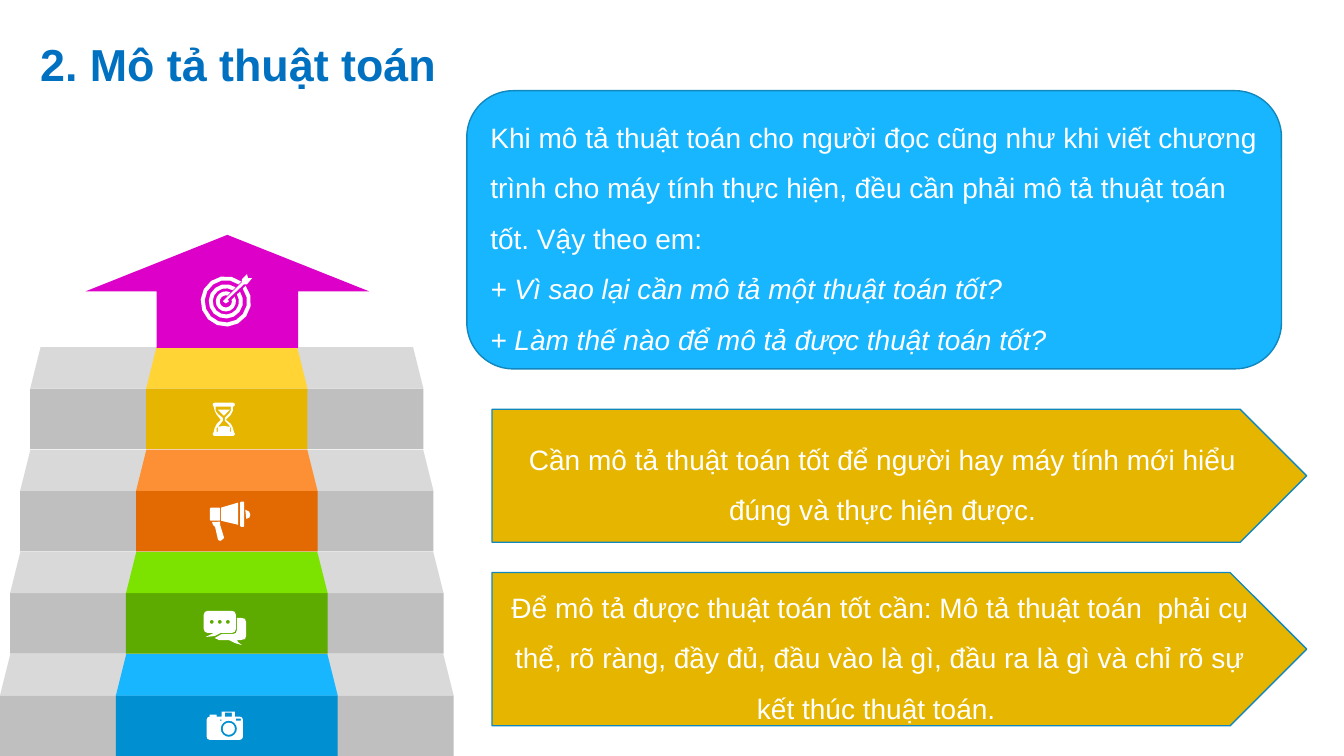
"""Build the slide on describing algorithms, with a staircase and three text panels."""
import math

import pptx
import pptx.dml.color
import pptx.enum.shapes
import pptx.enum.text
import pptx.util

Inches = pptx.util.Inches
Pt = pptx.util.Pt
SHAPE = pptx.enum.shapes.MSO_SHAPE
ALIGN = pptx.enum.text.PP_ALIGN

WHITE = "FFFFFF"
GOLD = "E6B500"
SKY = "17B6FF"
PANEL_LINE = "1187BD"
STEP_COLORS = [
    ("008FD0", SKY),
    ("5DAA00", "7CE200"),
    ("E36902", "FD9034"),
    (GOLD, "FFD434"),
]
STEP_PITCH = 1.015
TREAD_HEIGHT = 0.41
RISER_HEIGHT = 0.6


def color(value):
    """Return the colour for a hex string."""
    return pptx.dml.color.RGBColor.from_string(value)


def paint(shape, fill, line=None):
    """Set the fill and outline of a shape and remove its shadow."""
    shape.shadow.inherit = False
    shape.fill.solid()
    shape.fill.fore_color.rgb = color(fill)
    if line:
        shape.line.color.rgb = color(line)
        shape.line.width = Pt(1)
    else:
        shape.line.fill.background()


def add_block(slide, kind, box, fill, line=None):
    """Add a preset shape at left, top, width, height in inches."""
    shape = slide.shapes.add_shape(kind, *map(Inches, box))
    paint(shape, fill, line)
    return shape


def write_text(frame, text, size=20, font_color=WHITE, bold=False, italic=False,
               align=ALIGN.LEFT, spacing=1.5, before=0):
    """Add one formatted paragraph to a text frame."""
    frame.word_wrap = True
    frame.vertical_anchor = pptx.enum.text.MSO_ANCHOR.MIDDLE
    paragraph = frame.add_paragraph() if frame.text else frame.paragraphs[0]
    paragraph.alignment = align
    paragraph.line_spacing = spacing
    paragraph.space_before = Pt(before)
    run = paragraph.add_run()
    run.text = text
    run.font.name = "Arial"
    run.font.size = Pt(size)
    run.font.bold = bold
    run.font.italic = italic
    run.font.color.rgb = color(font_color)


def arc(x, y, radius, start, end, steps):
    """Return points along an arc, with angles in degrees."""
    angles = [math.radians(start + (end - start) * i / steps) for i in range(steps + 1)]
    return [(x + radius * math.cos(a), y + radius * math.sin(a)) for a in angles]


def circle(x, y, radius, steps=16):
    """Return the outline of a circle."""
    return arc(x, y, radius, 0, 360, steps)[:-1]


def box(left, top, right, bottom, cut=0.0):
    """Return the outline of a rectangle, with softened corners if cut is given."""
    if not cut:
        return [(left, top), (right, top), (right, bottom), (left, bottom)]
    corners = [
        (right - cut, bottom - cut), (left + cut, bottom - cut),
        (left + cut, top + cut), (right - cut, top + cut),
    ]
    return [
        point
        for turn, (x, y) in enumerate(corners)
        for point in arc(x, y, cut, 90 * turn, 90 * turn + 90, 2)
    ]


def open_ring(x, y, outer, inner, gap=0.03):
    """Return the outline of a ring that is open to the upper right."""
    outer_gap, inner_gap = (math.degrees(math.asin(gap / r)) for r in (outer, inner))
    return (arc(x, y, outer, outer_gap - 45, 315 - outer_gap, 14)
            + arc(x, y, inner, 315 - inner_gap, inner_gap - 45, 14))


def turned(point, degrees):
    """Return a point turned about the origin."""
    x, y = point
    cosine, sine = math.cos(math.radians(degrees)), math.sin(math.radians(degrees))
    return x * cosine - y * sine, x * sine + y * cosine


def add_icon(slide, contours, center=None, rotation=0):
    """Add a white freeform whose inner contours are holes, in a rotated frame if asked."""
    outlines = [
        [tuple(map(Inches, turned(point, -rotation))) for point in contour]
        for contour in contours
    ]
    builder = slide.shapes.build_freeform(*outlines[0][0])
    builder.add_line_segments(outlines[0][1:], close=True)
    for outline in outlines[1:]:
        builder.move_to(*outline[0])
        builder.add_line_segments(outline[1:], close=True)
    shape = builder.convert_to_shape()
    paint(shape, WHITE)
    if center:
        shape.left = Inches(center[0]) - shape.width // 2
        shape.top = Inches(center[1]) - shape.height // 2
        shape.rotation = rotation


def add_staircase(slide):
    """Add four steps with a coloured centre and the arrow on top."""
    for left, width, colors in (
        (0, 4.5, [("BFBFBF", "D9D9D9")] * 4),
        (1.15, 2.2, STEP_COLORS),
    ):
        for step, (riser, tread) in enumerate(colors):
            x, y, w = left + 0.1 * step, 6.9 - STEP_PITCH * step, width - 0.2 * step
            add_block(slide, SHAPE.RECTANGLE, (x, y, w, RISER_HEIGHT), riser)
            add_block(slide, SHAPE.TRAPEZOID, (x, y - TREAD_HEIGHT, w, TREAD_HEIGHT), tread)
    add_block(slide, SHAPE.UP_ARROW, (0.85, 2.33, 2.81, 1.12), "DC00C8")


def add_icons(slide):
    """Add the chat, hourglass, megaphone, camera and target icons."""
    add_icon(slide, [
        box(2.02, 6.06, 2.34, 6.28, 0.04),
        [(2.12, 6.28), (2.19, 6.28), (2.13, 6.31), (2.04, 6.32)],
        [(2.35, 6.13), (2.39, 6.13), (2.43, 6.14), (2.44, 6.17), (2.44, 6.31),
         (2.43, 6.34), (2.39, 6.35), (2.35, 6.35), (2.36, 6.37), (2.4, 6.4),
         (2.33, 6.38), (2.27, 6.35), (2.17, 6.35), (2.13, 6.33), (2.2, 6.29),
         (2.31, 6.29), (2.34, 6.28), (2.35, 6.25)],
        *[circle(x, 6.17, 0.02, 8) for x in (2.1, 2.18, 2.26)],
    ])
    add_icon(slide, [
        box(2.11, 3.99, 2.33, 4.03, 0.02),
        box(2.11, 4.28, 2.33, 4.32, 0.02),
        [(2.12, 4.03), (2.31, 4.03), (2.31, 4.07), (2.29, 4.11), (2.24, 4.16),
         (2.29, 4.2), (2.31, 4.24), (2.32, 4.28), (2.12, 4.28), (2.13, 4.24),
         (2.15, 4.2), (2.19, 4.16), (2.15, 4.11), (2.13, 4.07)],
        [(2.14, 4.03), (2.29, 4.03), (2.29, 4.07), (2.27, 4.1), (2.23, 4.14),
         (2.23, 4.17), (2.27, 4.21), (2.29, 4.24), (2.29, 4.28), (2.15, 4.28),
         (2.15, 4.24), (2.17, 4.22), (2.21, 4.17), (2.21, 4.14), (2.16, 4.1),
         (2.14, 4.07)],
        [(2.16, 4.06), (2.28, 4.06), (2.22, 4.12)],
        [(2.16, 4.23), (2.22, 4.22), (2.28, 4.23), (2.28, 4.28), (2.16, 4.28)],
    ], center=(2.22, 4.16), rotation=313.4)
    add_icon(slide, [
        [(2.1, 5.18), (2.18, 5.18), (2.18, 5.21), (2.22, 5.34), (2.2, 5.36),
         (2.18, 5.37), (2.16, 5.36), (2.13, 5.23), (2.11, 5.21)],
        box(2.08, 5.04, 2.18, 5.17, 0.01),
        [(2.19, 5.04), (2.36, 4.99), (2.36, 5.21), (2.19, 5.17)],
        box(2.38, 4.98, 2.42, 5.23, 0.01),
        [(2.43, 5.06), (2.47, 5.08), (2.48, 5.11), (2.47, 5.14), (2.44, 5.15)],
    ], center=(2.29, 5.16), rotation=165)
    add_icon(slide, [
        box(2.05, 7.11, 2.41, 7.34, 0.03),
        box(2.2, 7.06, 2.33, 7.11), box(2.23, 7.07, 2.3, 7.11),
        box(2.08, 7.09, 2.15, 7.11), box(2.18, 7.14, 2.2, 7.15),
        box(2.34, 7.13, 2.39, 7.15),
        circle(2.27, 7.23, 0.08), circle(2.27, 7.23, 0.06),
    ])
    rings = ((0.25, 0.21), (0.17, 0.13), (0.1, 0.06))
    add_icon(slide, [open_ring(2.24, 2.99, *radii) for radii in rings] + [[
        (2.24, 2.96), (2.4, 2.8), (2.4, 2.77), (2.45, 2.72), (2.46, 2.76), (2.5, 2.76),
        (2.45, 2.82), (2.42, 2.82), (2.26, 2.97), (2.27, 2.99), (2.24, 3.01), (2.21, 2.99),
    ]])


def add_panels(slide):
    """Add the question panel and the two answer panels."""
    question = add_block(slide, SHAPE.ROUNDED_RECTANGLE, (4.63, 0.9, 8.08, 2.76),
                         SKY, PANEL_LINE).text_frame
    write_text(question, "Khi mô tả thuật toán cho người đọc cũng như khi viết chương "
               "trình cho máy tính thực hiện, đều cần phải mô tả thuật toán tốt. "
               "Vậy theo em:")
    write_text(question, "+ Vì sao lại cần mô tả một thuật toán tốt?", italic=True)
    write_text(question, "+ Làm thế nào để mô tả được thuật toán tốt?", italic=True)
    for top, height, answer in (
        (4.06, 1.32, "Cần mô tả thuật toán tốt để người hay máy tính mới hiểu "
                     "đúng và thực hiện được."),
        (5.68, 1.52, "Để mô tả được thuật toán tốt cần: Mô tả thuật toán  phải cụ "
                     "thể, rõ ràng, đầy đủ, đầu vào là gì, đầu ra là gì và chỉ rõ "
                     "sự kết thúc thuật toán. "),
    ):
        panel = add_block(slide, SHAPE.PENTAGON, (4.88, top, 8.08, height), GOLD, PANEL_LINE)
        write_text(panel.text_frame, answer, align=ALIGN.CENTER)


def main():
    """Build and save the presentation."""
    presentation = pptx.Presentation()
    presentation.slide_width = Inches(13.33)
    presentation.slide_height = Inches(7.5)
    slide = presentation.slides.add_slide(presentation.slide_layouts[6])
    title = slide.shapes.add_textbox(*map(Inches, (0.3, 0.27, 12.66, 0.79)))
    write_text(title.text_frame, "2. Mô tả thuật toán", size=32, font_color="0070C0",
               bold=True, spacing=0.9, before=10)
    add_staircase(slide)
    add_icons(slide)
    add_panels(slide)
    presentation.save("out.pptx")


if __name__ == "__main__":
    main()
